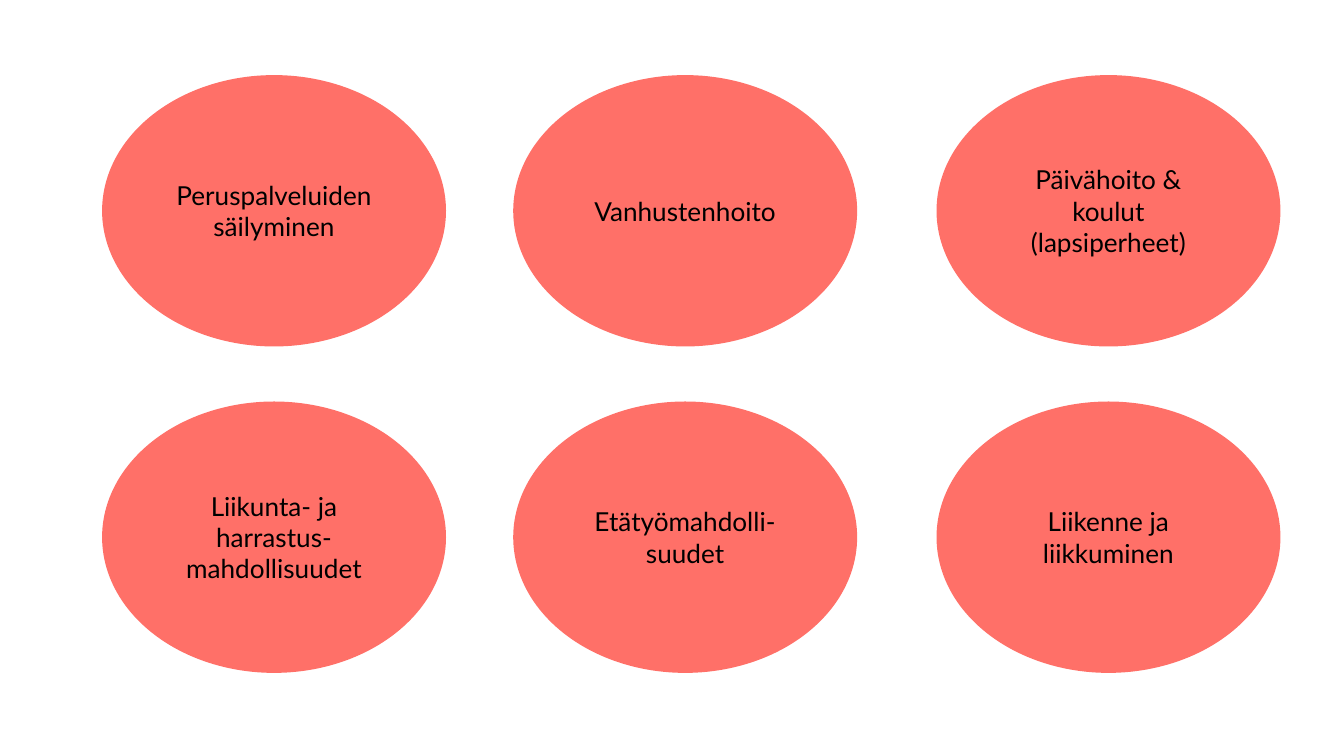
from pptx import Presentation
from pptx.dml.color import RGBColor
from pptx.enum.shapes import MSO_SHAPE
from pptx.enum.text import MSO_ANCHOR, PP_ALIGN
from pptx.util import Cm, Pt

COLUMN_LEFTS = [1.93, 9.7, 17.7]
ROW_TOPS = [1.42, 7.59]
THEME_ROWS = [
    [
        ["Peruspalveluiden säilyminen"],
        ["Vanhustenhoito"],
        ["Päivähoito & koulut (lapsiperheet)"],
    ],
    [
        ["Liikunta- ja harrastus-", "mahdollisuudet"],
        ["Etätyömahdolli-", "suudet"],
        ["Liikenne ja liikkuminen"],
    ],
]


def color(hex_value):
    return RGBColor.from_string(hex_value)


def add_line(paragraph, wording):
    paragraph.alignment = PP_ALIGN.CENTER
    run = paragraph.add_run()
    run.text = wording
    run.font.name = "Lato"
    run.font.size = Pt(14)
    run.font.color.rgb = color("000000")


def add_theme(slide, left, top, lines):
    theme = slide.shapes.add_shape(
        MSO_SHAPE.OVAL, Cm(left), Cm(top), Cm(6.5), Cm(5.13)
    )
    theme.shadow.inherit = False
    theme.fill.solid()
    theme.fill.fore_color.rgb = color("FF7068")
    theme.line.fill.background()

    label = theme.text_frame
    label.word_wrap = True
    label.vertical_anchor = MSO_ANCHOR.MIDDLE
    label.margin_left = label.margin_right = Cm(0.25)
    label.margin_top = label.margin_bottom = Cm(0.25)
    for index, wording in enumerate(lines):
        paragraph = label.add_paragraph() if index else label.paragraphs[0]
        add_line(paragraph, wording)


def main():
    presentation = Presentation()
    presentation.slide_width = Cm(25.4)
    presentation.slide_height = Cm(14.29)
    slide = presentation.slides.add_slide(presentation.slide_layouts[6])
    for top, themes in zip(ROW_TOPS, THEME_ROWS):
        for left, lines in zip(COLUMN_LEFTS, themes):
            add_theme(slide, left, top, lines)
    presentation.save("out.pptx")


if __name__ == "__main__":
    main()
